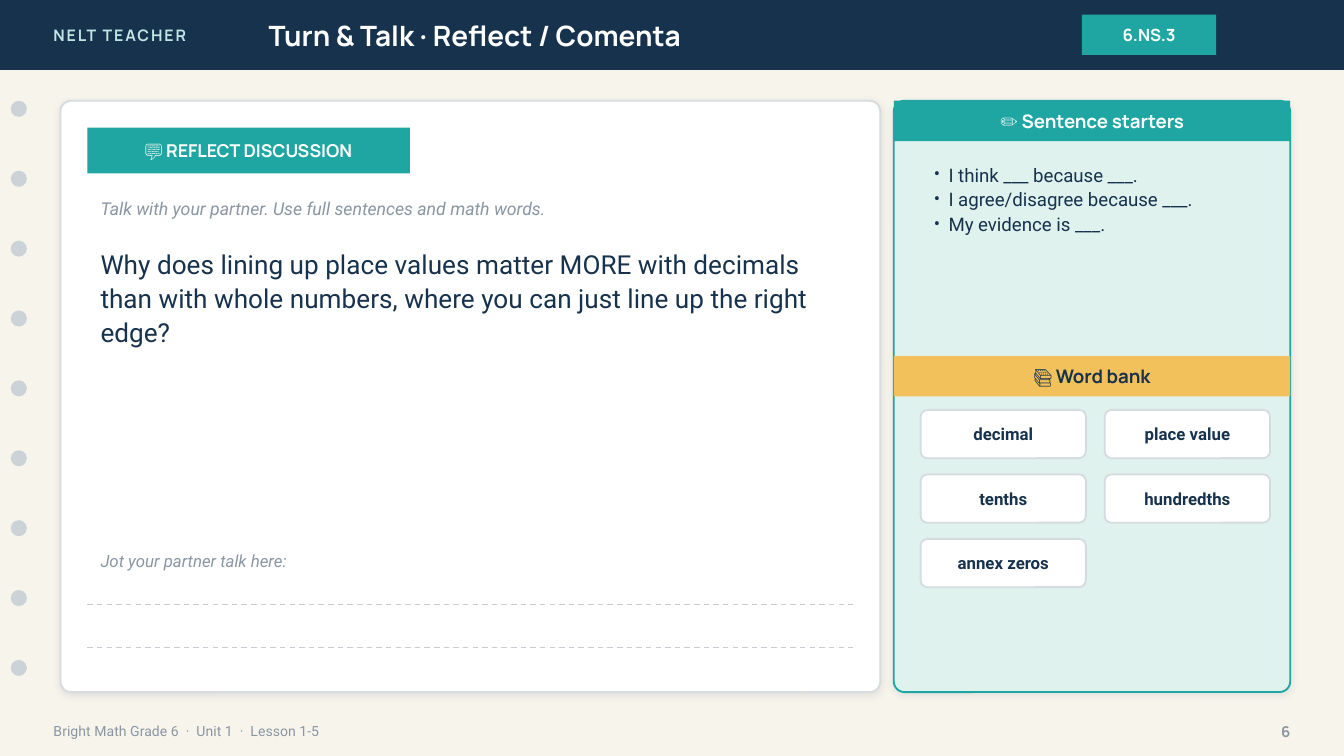
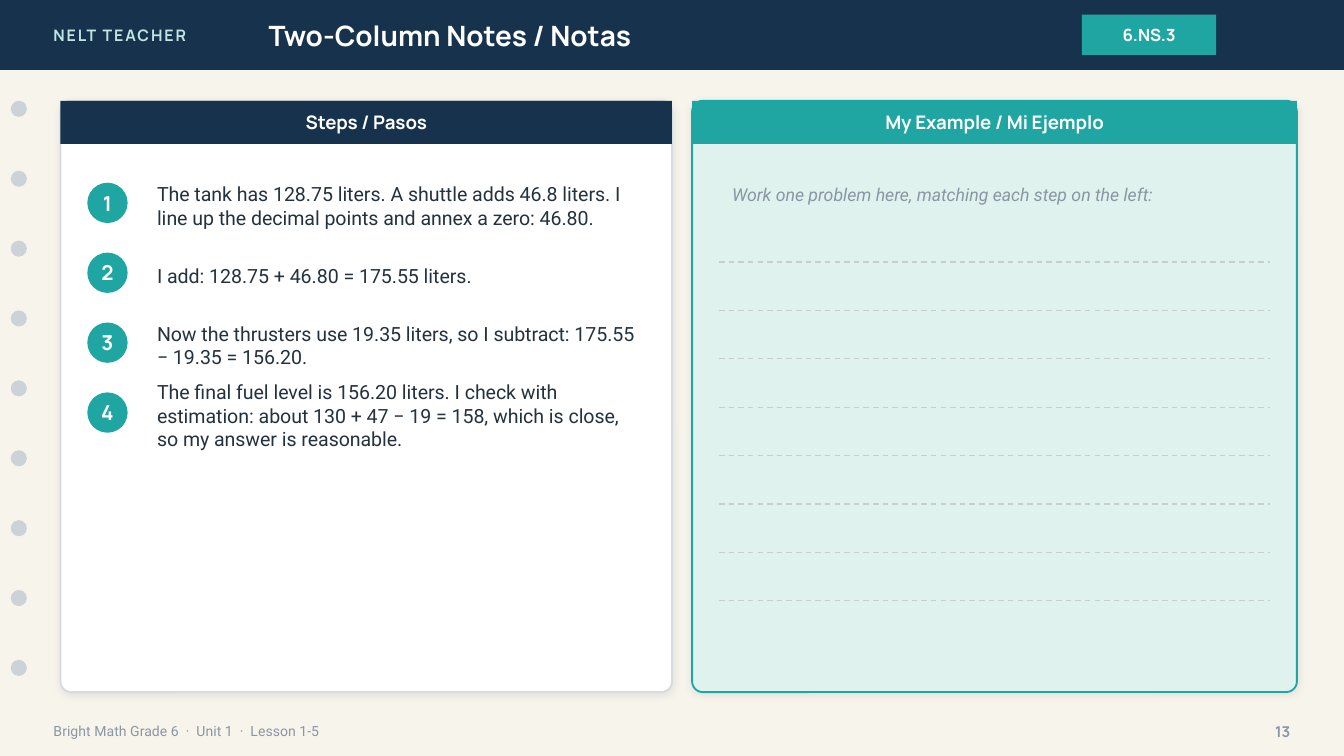
from lxml.etree import SubElement
from pptx import Presentation
from pptx.dml.color import RGBColor
from pptx.enum.dml import MSO_LINE
from pptx.enum.shapes import MSO_CONNECTOR, MSO_SHAPE as Kind
from pptx.enum.text import MSO_ANCHOR as Anchor, PP_ALIGN as Align
from pptx.oxml.ns import qn
from pptx.util import Pt

PX = 9144  # 100 px to the inch
HUES = {
    "paper": "F7F4EC", "navy": "17324D", "teal": "1FA6A2", "mint": "DFF2EE",
    "pale": "BFE6E2", "gold": "F2C15B", "white": "FFFFFF", "dot": "CBD3D9",
    "gray": "8A96A3", "edge": "D6DBDF", "rule": "C7CDD2", "ink": "24323F",
    "shade": "1C2E42",
}
HUES = {name: RGBColor.from_string(code) for name, code in HUES.items()}
HEAD, BODY = "Manrope", "Roboto"


def shape(slide, kind, area, fill, edge=None, adj=None, shade=False):
    item = slide.shapes.add_shape(kind, *(n * PX for n in area))
    item.shadow.inherit = False
    item.fill.solid()
    item.fill.fore_color.rgb = HUES[fill]
    if edge:
        item.line.color.rgb = HUES[edge]
        item.line.width = Pt(1)
    else:
        item.line.fill.background()
    if adj:
        item.adjustments[0] = adj
    if shade:
        glow = SubElement(item.element.spPr.find(qn("a:effectLst")), qn("a:outerShdw"),
                          blurRad=str(Pt(4)), dist=str(Pt(1)), dir="5400000",
                          algn="bl", rotWithShape="0")
        tint = SubElement(glow, qn("a:srgbClr"), val=str(HUES["shade"]))
        SubElement(tint, qn("a:alpha"), val="10000")
    return item


def text(words, on=None, slide=None, area=None, size=10, face=BODY, hue="white",
         bold=False, slant=False, align=None, anchor=Anchor.MIDDLE, lead=None,
         track=None, bullet=False, inset=None):
    """Write words on a shape, centred, or in a new text box."""
    if on is None:
        frame = slide.shapes.add_textbox(*(n * PX for n in area)).text_frame
    else:
        frame, align = on.text_frame, Align.CENTER
    frame.word_wrap = True
    frame.vertical_anchor = anchor
    if inset is not None:
        frame.margin_left = frame.margin_right = inset * PX
        frame.margin_top = frame.margin_bottom = inset * PX
    frame.text = words
    for para in frame.paragraphs:
        para.alignment = align
        if lead:
            para.line_spacing = lead
        if bullet:
            props = para._p.get_or_add_pPr()
            props.set("marL", str(11 * PX))
            props.set("indent", str(-11 * PX))
            SubElement(props, qn("a:buFont"), typeface=face)
            SubElement(props, qn("a:buChar"), char="•")
        for run in para.runs:
            font = run.font
            font.size, font.name = Pt(size), face
            font.bold, font.italic = bold, slant
            font.color.rgb = HUES[hue]
            if track:
                run._r.get_or_add_rPr().set("spc", str(track))


deck = Presentation()
deck.slide_width = 1000 * PX
deck.slide_height = deck.slide_width * 9 // 16

# Frame shared by both slides
pages = []
for title, number in (("Turn & Talk · Reflect / Comenta", "6"),
                      ("Two-Column Notes / Notas", "13")):
    page = deck.slides.add_slide(deck.slide_layouts[6])
    page.background.fill.solid()
    page.background.fill.fore_color.rgb = HUES["paper"]
    shape(page, Kind.RECTANGLE, (0, 0, 1000, 52), "navy")
    text("NELT TEACHER", slide=page, area=(30, 0, 240, 52), size=8.5, face=HEAD,
         hue="pale", bold=True, track=100)
    text(title, slide=page, area=(190, 0, 560, 52), size=15, face=HEAD, bold=True)
    badge = shape(page, Kind.RECTANGLE, (805, 11, 100, 30), "teal")
    text("6.NS.3", on=badge, size=9, face=HEAD, bold=True)
    for row in range(9):
        shape(page, Kind.OVAL, (8, 75 + 52 * row, 12, 12), "dot")
    text("Bright Math Grade 6  ·  Unit 1  ·  Lesson 1-5", slide=page,
         area=(30, 530, 700, 28), size=7.5, hue="gray")
    text(number, slide=page, area=(920, 530, 50, 28), size=8, face=HEAD,
         hue="gray", bold=True, align=Align.RIGHT)
    pages.append(page)
talk, notes = pages

# Cards: slide, left, width, fill, edge, corner
for page, left, wide, fill, edge, adj in (
        (talk, 45, 610, "white", "edge", 0.018),
        (talk, 665, 295, "mint", "teal", 0.027),
        (notes, 45, 455, "white", "edge", 0.018),
        (notes, 515, 450, "mint", "teal", 0.018)):
    shape(page, Kind.ROUNDED_RECTANGLE, (left, 75, wide, 440), fill, edge, adj, True)

# Header bands: slide, area, fill, label, size, hue
for page, area, fill, label, size, hue in (
        (talk, (65, 95, 240, 34), "teal", "💬 REFLECT DISCUSSION", 9.5, "white"),
        (talk, (665, 75, 295, 30), "teal", "✏️ Sentence starters", 10, "white"),
        (talk, (665, 265, 295, 30), "gold", "📚 Word bank", 10, "navy"),
        (notes, (45, 75, 455, 32), "navy", "Steps / Pasos", 10, "white"),
        (notes, (515, 75, 450, 32), "teal", "My Example / Mi Ejemplo", 10, "white")):
    band = shape(page, Kind.RECTANGLE, area, fill)
    text(label, on=band, size=size, face=HEAD, hue=hue, bold=True)

# Hints in italics
for page, area, size, hint in (
        (talk, (65, 140, 570, 30), 9.5,
         "Talk with your partner. Use full sentences and math words."),
        (talk, (65, 405, 570, 25), 9, "Jot your partner talk here:"),
        (notes, (535, 125, 410, 40), 9.5,
         "Work one problem here, matching each step on the left:")):
    text(hint, slide=page, area=area, size=size, hue="gray", slant=True)

# Question and sentence starters
text("Why does lining up place values matter MORE with decimals than with whole "
     "numbers, where you can just line up the right edge?",
     slide=talk, area=(65, 178, 570, 200), size=14, hue="navy",
     anchor=Anchor.TOP, lead=1.08)
text("I think ___ because ___.\nI agree/disagree because ___.\nMy evidence is ___.",
     slide=talk, area=(685, 115, 260, 140), hue="navy", anchor=Anchor.TOP,
     lead=1.1, bullet=True)

# Word bank, two to a row
bank = ("decimal", "place value", "tenths", "hundredths", "annex zeros")
for i, word in enumerate(bank):
    row, col = divmod(i, 2)
    chip = shape(talk, Kind.ROUNDED_RECTANGLE,
                 (685 + 137 * col, 305 + 48 * row, 123, 36), "white", "edge", 0.139)
    text(word, on=chip, size=9, hue="navy", bold=True)

# Numbered steps
steps = (
    "The tank has 128.75 liters. A shuttle adds 46.8 liters. I line up the decimal "
    "points and annex a zero: 46.80.",
    "I add: 128.75 + 46.80 = 175.55 liters.",
    "Now the thrusters use 19.35 liters, so I subtract: 175.55 − 19.35 = 156.20.",
    "The final fuel level is 156.20 liters. I check with estimation: about "
    "130 + 47 − 19 = 158, which is close, so my answer is reasonable.",
)
for i, step in enumerate(steps):
    top = 130 + 52 * i
    disc = shape(notes, Kind.OVAL, (65, top + 6, 30, 30), "teal")
    text(str(i + 1), on=disc, size=11, face=HEAD, bold=True, inset=0)
    text(step, slide=notes, area=(107, top, 378, 46), size=10.5, hue="ink")

# Dashed writing lines: slide, left, right, first, gap, count
for page, left, right, first, gap, count in ((talk, 65, 635, 450, 32, 2),
                                             (notes, 535, 945, 195, 36, 8)):
    for i in range(count):
        y = (first + gap * i) * PX
        rule = page.shapes.add_connector(MSO_CONNECTOR.STRAIGHT,
                                         left * PX, y, right * PX, y)
        rule.line.color.rgb = HUES["rule"]
        rule.line.width = Pt(0.75)
        rule.line.dash_style = MSO_LINE.DASH
        SubElement(rule.element.spPr, qn("a:effectLst"))

deck.save("out.pptx")
